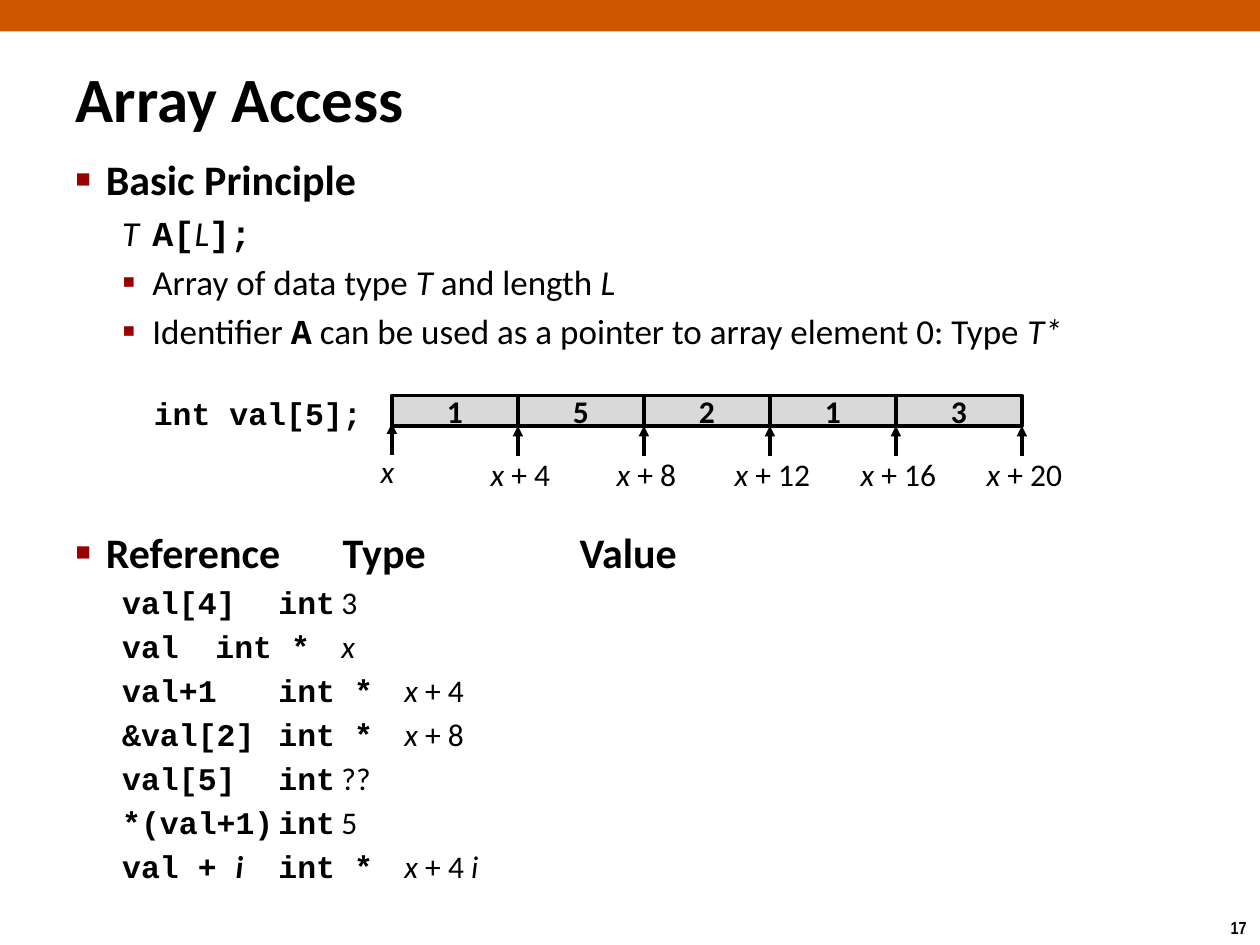
from lxml.etree import SubElement
from pptx import Presentation
from pptx.dml.color import RGBColor
from pptx.enum.shapes import MSO_CONNECTOR, MSO_SHAPE
from pptx.enum.text import MSO_ANCHOR, MSO_AUTO_SIZE, PP_ALIGN
from pptx.oxml.ns import qn
from pptx.util import Inches, Pt

COLORS = {"ink": "000000", "bar": "CC5500", "cell": "D9D9D9", "mark": "990000"}
FORMS = {
    "plain": {"name": "Calibri", "bold": False, "italic": False},
    "ital": {"name": "Calibri", "bold": False, "italic": True},
    "bold": {"name": "Calibri", "bold": True, "italic": False},
    "both": {"name": "Calibri", "bold": True, "italic": True},
    "code": {"name": "Courier New", "bold": True, "italic": False},
    "page": {"name": "Arial Narrow", "bold": True, "italic": False},
}
LEVELS = [
    {"left": 0.24, "mark": "■", "scale": 60},
    {"left": 0.61, "mark": "▪", "scale": 110},
]
HANG = -0.24
TABS = (2.12, 4)

INTRO = [
    (0, 24, True, [("Basic Principle", "bold")]),
    (1, 20, False, [("T\t", "ital"), ("A[", "code"), ("L", "ital"), ("];", "code")]),
    (1, 20, True, [("Array of data type ", "plain"), ("T", "ital"),
                   (" and length ", "plain"), ("L", "ital")]),
    (1, 20, True, [("Identifier ", "plain"), ("A", "code"),
                   (" can be used as a pointer to array element 0: Type ", "plain"),
                   ("T*", "ital")]),
]
HEAD = (0, 24, True, [("Reference\tType\tValue", "bold")])
ROWS = [
    [("val[4]\tint\t", "code"), ("3", "plain")],
    [("val\tint *\t", "code"), ("x", "ital")],
    [("val+1\tint *\t", "code"), ("x", "ital"), (" + 4", "plain")],
    [("&val[2]\tint *\t", "code"), ("x", "ital"), (" + 8", "plain")],
    [("val[5]\tint\t", "code"), ("??", "plain")],
    [("*(val+1)\tint\t", "code"), ("5", "plain")],
    [("val + ", "code"), ("i\t", "both"), ("int *\t", "code"),
     ("x ", "ital"), ("+ 4 ", "plain"), ("i", "ital")],
]
VALUES = [1, 5, 2, 1, 3]
START, TOP, WIDE, HIGH = 3.11, 3.14, 1, 0.24


def place(shape, left, top, wide, high):
    box = {"left": left, "top": top, "width": wide, "height": high}
    for key, value in box.items():
        setattr(shape, key, Inches(value))


class Page:
    def __init__(self):
        self.deck = Presentation()
        self.deck.slide_width, self.deck.slide_height = Inches(10), Inches(7.5)
        self.slide = self.deck.slides.add_slide(self.deck.slide_layouts[1])
        self.shapes = self.slide.shapes

    def tint(self, name):
        return RGBColor.from_string(COLORS[name])

    def fill_in(self, para, runs, size):
        for text, form in runs:
            run = para.add_run()
            run.text = text
            for key, value in FORMS[form].items():
                setattr(run.font, key, value)
            run.font.size = Pt(size)
            run.font.color.rgb = self.tint("ink")

    def title(self, text):
        shape = self.shapes.title
        place(shape, 0.5, 0.46, 6.08, 0.63)
        frame = shape.text_frame
        frame.auto_size = MSO_AUTO_SIZE.NONE
        frame.vertical_anchor = MSO_ANCHOR.MIDDLE
        frame.paragraphs[0].alignment = PP_ALIGN.LEFT
        self.fill_in(frame.paragraphs[0], [(text, "bold")], 36)

    def indent(self, para, level, marked):
        rule = LEVELS[level]
        para.level = level
        props = para._p.get_or_add_pPr()
        props.set("marL", str(Inches(rule["left"])))
        props.set("indent", str(Inches(HANG)))
        if marked:
            color = SubElement(props, qn("a:buClr"))
            SubElement(color, qn("a:srgbClr"), val=COLORS["mark"])
            SubElement(props, qn("a:buSzPct"), val=str(rule["scale"] * 1000))
            SubElement(props, qn("a:buFont"), typeface="Arial")
            SubElement(props, qn("a:buChar"), char=rule["mark"])
        else:
            SubElement(props, qn("a:buNone"))
        stops = SubElement(props, qn("a:tabLst"))
        for stop in TABS:
            SubElement(stops, qn("a:tab"), pos=str(Inches(stop)), algn="l")

    def body(self, items):
        shape = self.slide.placeholders[1]
        place(shape, 0.5, 1.17, 8.82, 6.25)
        frame = shape.text_frame
        frame.auto_size = MSO_AUTO_SIZE.NONE
        for count, (level, size, marked, runs) in enumerate(items):
            para = frame.add_paragraph() if count else frame.paragraphs[0]
            self.indent(para, level, marked)
            self.fill_in(para, runs, size)
            if count == len(INTRO):
                para.space_before = Pt(100)

    def label(self, box, runs, size=18, align=PP_ALIGN.CENTER, wrap=True):
        frame = self.shapes.add_textbox(*map(Inches, box)).text_frame
        frame.word_wrap = wrap
        frame.paragraphs[0].alignment = align
        self.fill_in(frame.paragraphs[0], runs, size)

    def rect(self, box, fill, text=None):
        shape = self.shapes.add_shape(MSO_SHAPE.RECTANGLE, *map(Inches, box))
        shape.shadow.inherit = False
        shape.fill.solid()
        shape.fill.fore_color.rgb = self.tint(fill)
        if text is None:
            shape.line.fill.background()
            return
        shape.line.color.rgb = self.tint("ink")
        shape.line.width = Pt(2)
        frame = shape.text_frame
        frame.word_wrap = False
        frame.vertical_anchor = MSO_ANCHOR.MIDDLE
        frame.paragraphs[0].alignment = PP_ALIGN.CENTER
        self.fill_in(frame.paragraphs[0], [(text, "bold")], 18)

    def arrow(self, left, low, high):
        line = self.shapes.add_connector(
            MSO_CONNECTOR.STRAIGHT, *map(Inches, (left, low, left, high)))
        line.line.color.rgb = self.tint("ink")
        line.line.width = Pt(2)
        props = line._element.spPr
        SubElement(props.find(qn("a:ln")), qn("a:tailEnd"), type="triangle")
        SubElement(props, qn("a:effectLst"))


def main():
    page = Page()
    page.rect((0, 0, 10, 0.25), "bar")
    page.label((9.66, 7.23, 0.34, 0.27), [("17", "page")], size=10, wrap=False)
    page.title("Array Access")
    page.body(INTRO + [HEAD] + [(1, 18, False, runs) for runs in ROWS])
    page.label((1.11, 3.08, 1.86, 0.4), [("int val[5];", "code")],
               align=PP_ALIGN.RIGHT)
    for count, value in enumerate(VALUES):
        page.rect((START + count * WIDE, TOP, WIDE, HIGH), "cell", str(value))
    page.label((2.86, 3.54, 0.43, 0.4), [("x", "ital")])
    page.arrow(START, 3.61, 3.36)
    for count in range(1, len(VALUES) + 1):
        left = START + count * WIDE
        page.label((left - 0.52, 3.56, 1.08, 0.4),
                   [("x ", "ital"), (f"+ {4 * count}", "plain")])
        page.arrow(left, 3.62, 3.38)
    page.deck.save("out.pptx")


if __name__ == "__main__":
    main()
